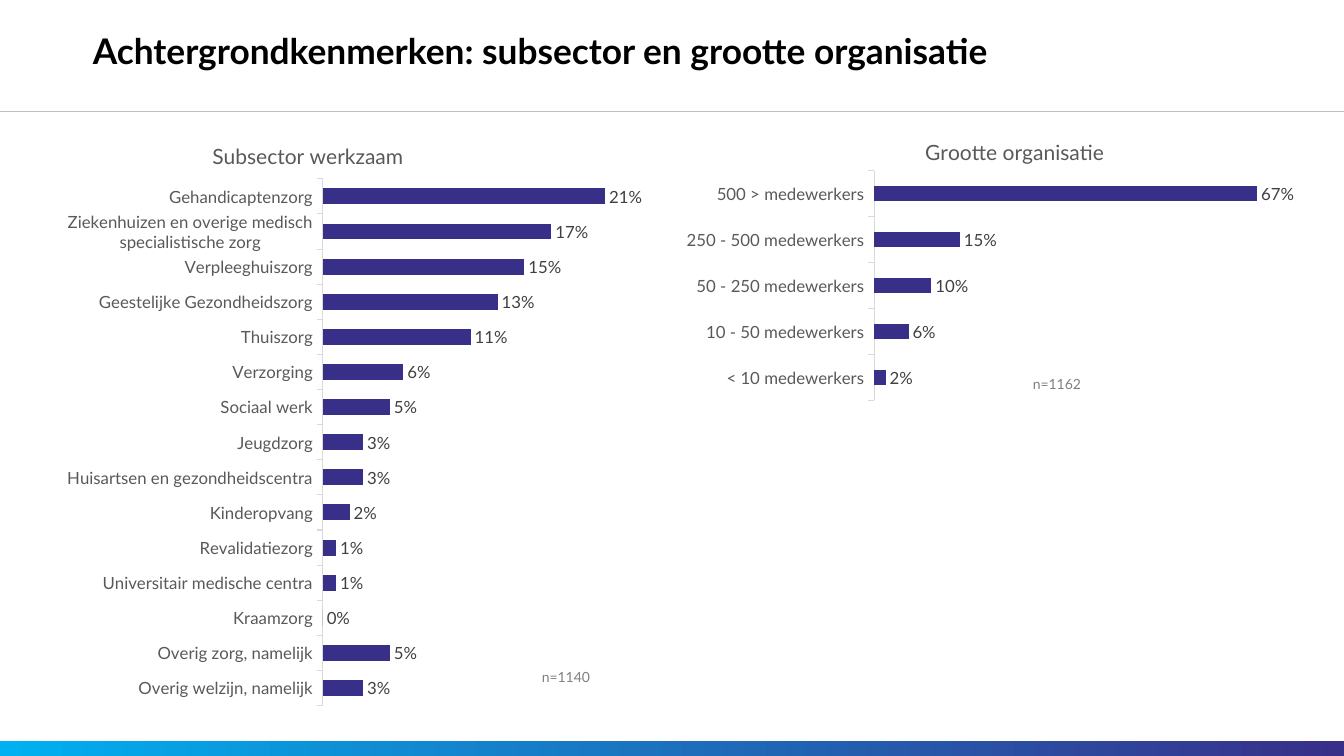
from lxml import etree
from pptx import Presentation
from pptx.chart.data import CategoryChartData
from pptx.dml.color import RGBColor
from pptx.enum.chart import XL_CHART_TYPE as ChartType, XL_LABEL_POSITION as LabelPosition
from pptx.enum.chart import XL_TICK_LABEL_POSITION as TickLabels, XL_TICK_MARK as TickMark
from pptx.enum.shapes import MSO_CONNECTOR, MSO_SHAPE
from pptx.enum.text import MSO_ANCHOR, MSO_AUTO_SIZE, PP_ALIGN
from pptx.oxml.ns import qn
from pptx.util import Inches, Pt

FONT = "Lato"
COLORS = {name: RGBColor.from_string(value) for name, value in {
    "black": "000000", "label": "404040", "axis": "595959", "note": "808080",
    "rule": "BFBFBF", "axis line": "D9D9D9", "purple": "382F89", "blue": "00B0F0",
}.items()}


def write(frame, text, size, color, bold=False, align=None, spacing=None):
    para = frame.paragraphs[0]
    para.alignment = align
    para.line_spacing = spacing
    span = para.add_run()
    span.text = text
    span.font.name, span.font.size, span.font.bold = FONT, Pt(size), bold
    span.font.color.rgb = COLORS[color]


def place(element, index, **layout):
    """Give a chart title or plot area a manual layout, as fractions of the chart."""
    for old in element.findall(qn("c:layout")):
        element.remove(old)
    outer = etree.Element(qn("c:layout"))
    manual = etree.SubElement(outer, qn("c:manualLayout"))
    if "w" in layout:
        etree.SubElement(manual, qn("c:layoutTarget")).set("val", "inner")
    for side in ("x", "y"):
        etree.SubElement(manual, qn(f"c:{side}Mode")).set("val", "edge")
    for side, value in layout.items():
        etree.SubElement(manual, qn(f"c:{side}")).set("val", str(value))
    element.insert(index, outer)


deck = Presentation()
deck.slide_width, deck.slide_height = Inches(13.33), Inches(7.5)
page = deck.slides.add_slide(deck.slide_layouts[5])

# Frame of the page
band = page.shapes.add_shape(MSO_SHAPE.RECTANGLE, 0, Inches(7.35), Inches(13.33), Inches(0.15))
band.shadow.inherit = False
band.line.fill.background()
band.fill.gradient()
band.fill.gradient_angle = 0
for stop, color, position in zip(band.fill.gradient_stops, ("blue", "purple"), (0, 1)):
    stop.color.rgb = COLORS[color]
    stop.position = position

rule = page.shapes.add_connector(MSO_CONNECTOR.STRAIGHT, 0, Inches(1.1), Inches(13.33), Inches(1.1))
rule.line.color.rgb = COLORS["rule"]
rule.line.width = Pt(0.5)
etree.SubElement(rule._element.spPr, qn("a:effectLst"))

title = page.shapes.title
title.left, title.top, title.width, title.height = map(Inches, (0.92, 0.07, 10.06, 0.65))
frame = title.text_frame
frame.margin_left = frame.margin_right = frame.margin_top = frame.margin_bottom = 0
frame.vertical_anchor = MSO_ANCHOR.BOTTOM
frame.auto_size = MSO_AUTO_SIZE.NONE
frame.word_wrap = True
write(frame, "Achtergrondkenmerken: subsector en grootte organisatie", 25.2, "black",
      bold=True, align=PP_ALIGN.LEFT, spacing=0.9)

# Bar charts
sizes = {
    "< 10 medewerkers": 0.02, "10 - 50 medewerkers": 0.06, "50 - 250 medewerkers": 0.1,
    "250 - 500 medewerkers": 0.15, "500 > medewerkers": 0.67,
}
subsectors = {
    "Gehandicaptenzorg": 0.21, "Ziekenhuizen en overige medisch specialistische zorg": 0.17,
    "Verpleeghuiszorg": 0.15, "Geestelijke Gezondheidszorg": 0.13, "Thuiszorg": 0.11,
    "Verzorging": 0.06, "Sociaal werk": 0.05, "Jeugdzorg": 0.03,
    "Huisartsen en gezondheidscentra": 0.03, "Kinderopvang": 0.02, "Revalidatiezorg": 0.01,
    "Universitair medische centra": 0.01, "Kraamzorg": 0, "Overig zorg, namelijk": 0.05,
    "Overig welzijn, namelijk": 0.03,
}
charts = [
    dict(title="Grootte organisatie", shares=sizes, left=6.67, height=2.85, gap=219, overlap=0,
         reverse=False, top_value=0.8, heading=dict(x=0.37, y=0.05),
         area=dict(x=0.3, y=0.18, w=0.68, h=0.8)),
    dict(title="Subsector werkzaam", shares=subsectors, left=0, height=5.94, gap=121, overlap=79,
         reverse=True, top_value=0.25, heading=dict(x=0.31, y=0.03),
         area=dict(x=0.48, y=0.1, w=0.5, h=0.88)),
]
for item in charts:
    data = CategoryChartData(number_format="0%")
    data.categories = list(item["shares"])
    data.add_series("Series 1", list(item["shares"].values()))
    chart = page.shapes.add_chart(ChartType.BAR_CLUSTERED, Inches(item["left"]), Inches(1.18),
                                  Inches(6.67), Inches(item["height"]), data).chart
    chart.font.name, chart.font.size = FONT, Pt(10)
    chart.has_legend = False
    chart.has_title = True
    write(chart.chart_title.text_frame, item["title"], 15, "axis")
    place(chart.chart_title._element, 1, **item["heading"])
    place(chart._chartSpace.chart.plotArea, 0, **item["area"])

    categories = chart.category_axis
    categories.reverse_order = item["reverse"]
    categories.has_major_gridlines = False
    categories.major_tick_mark = TickMark.OUTSIDE
    categories.minor_tick_mark = TickMark.NONE
    categories.tick_label_position = TickLabels.NEXT_TO_AXIS
    categories.format.line.color.rgb = COLORS["axis line"]
    categories.format.line.width = Pt(0.75)
    values = chart.value_axis
    values.visible = False
    values.has_major_gridlines = False
    values.minimum_scale, values.maximum_scale = 0, item["top_value"]

    plot = chart.plots[0]
    plot.gap_width, plot.overlap = item["gap"], item["overlap"]
    plot.vary_by_categories = False
    series = plot.series[0]
    series.format.fill.solid()
    series.format.fill.fore_color.rgb = COLORS["purple"]
    labels = series.data_labels
    labels.show_value = True
    labels.position = LabelPosition.OUTSIDE_END
    labels.number_format, labels.number_format_is_linked = "0%", False
    for font, color in ((categories.tick_labels.font, "axis"), (labels.font, "label")):
        font.name, font.size = FONT, Pt(12)
        font.color.rgb = COLORS[color]

# Sample sizes
for text, left, top in (("n=1140", 5.25, 6.5), ("n=1162", 10.12, 3.59)):
    box = page.shapes.add_textbox(Inches(left), Inches(top), Inches(0.7), Inches(0.32))
    box.text_frame.word_wrap = True
    box.text_frame.auto_size = MSO_AUTO_SIZE.SHAPE_TO_FIT_TEXT
    write(box.text_frame, text, 10, "note", align=PP_ALIGN.RIGHT, spacing=1.5)

deck.save("out.pptx")
